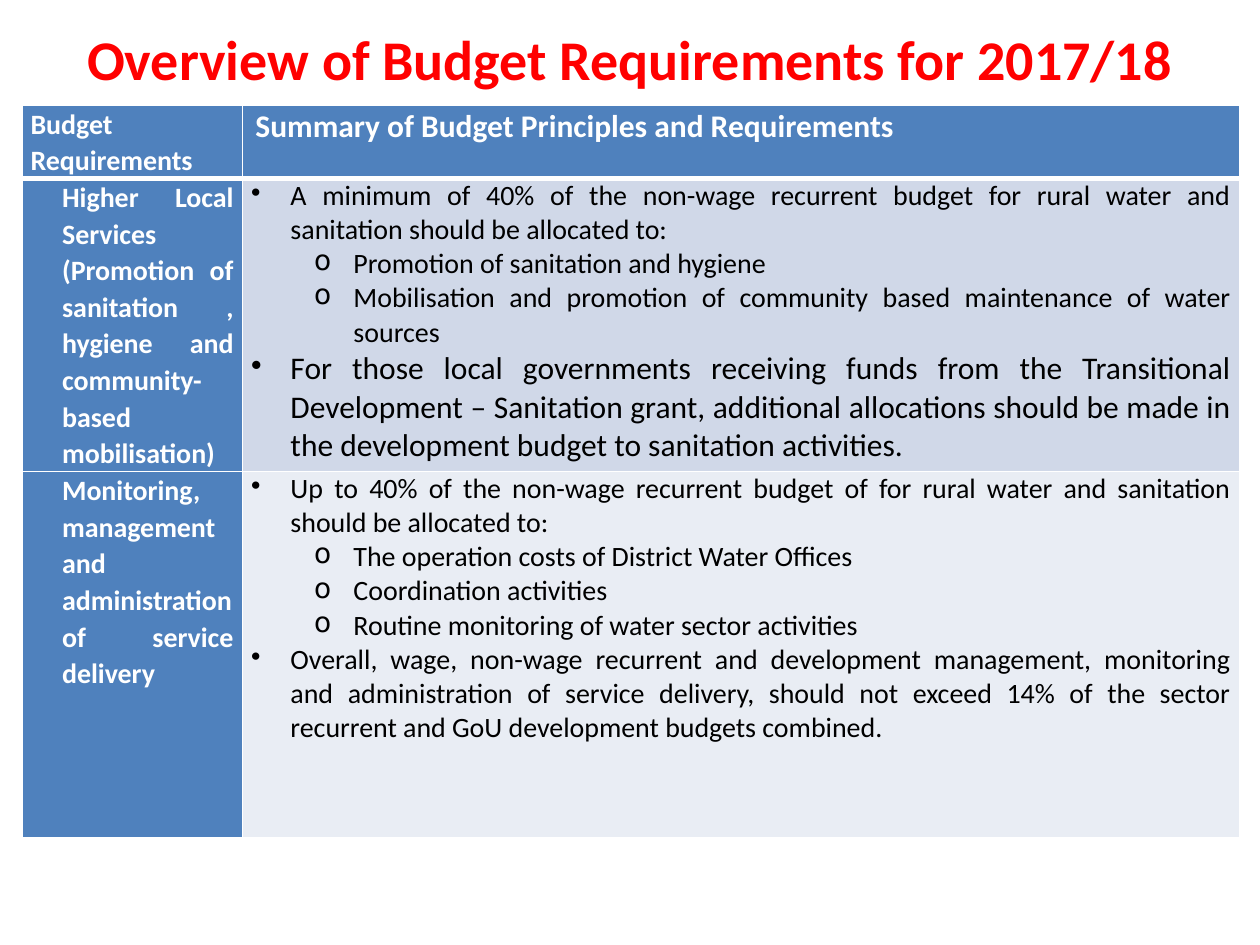
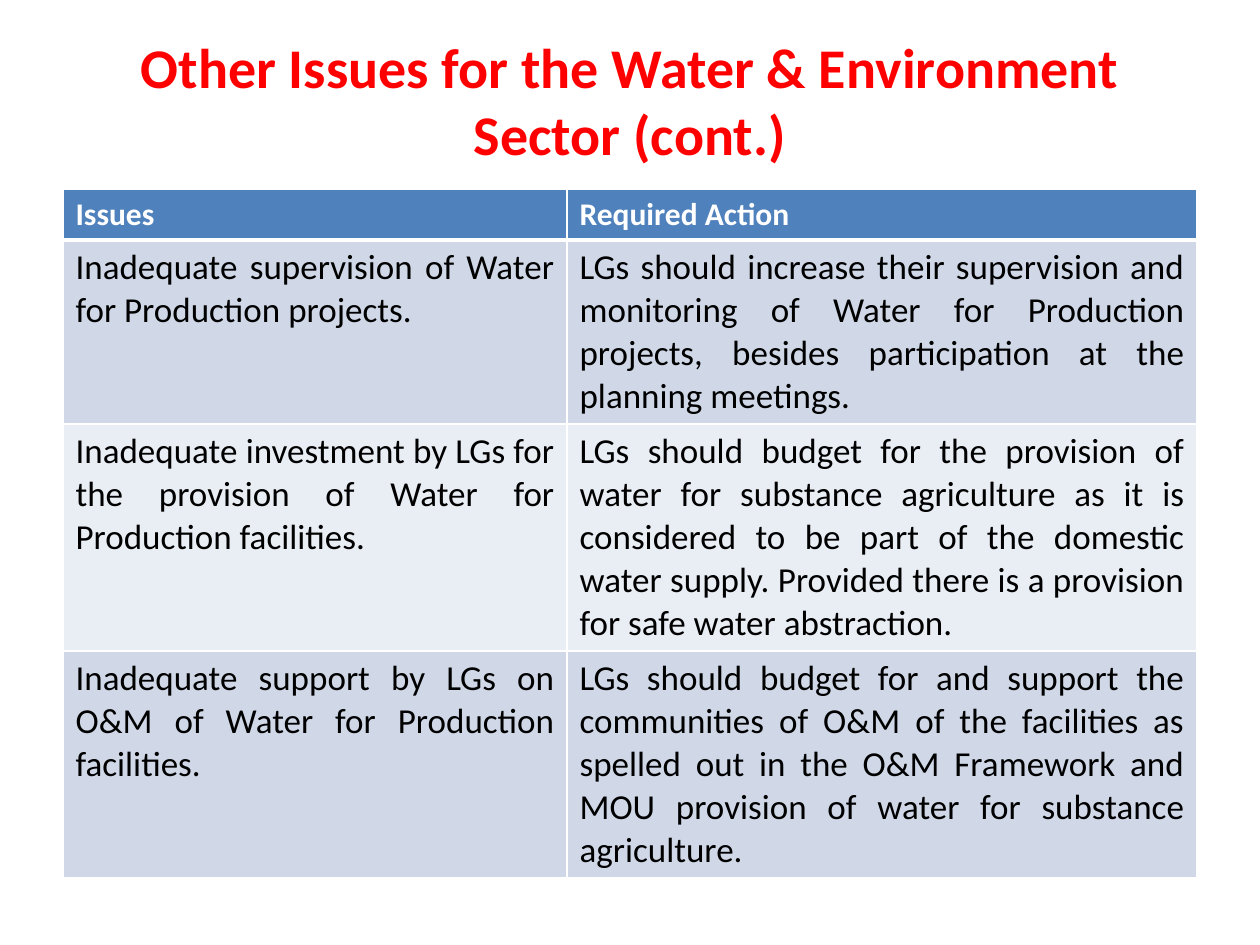
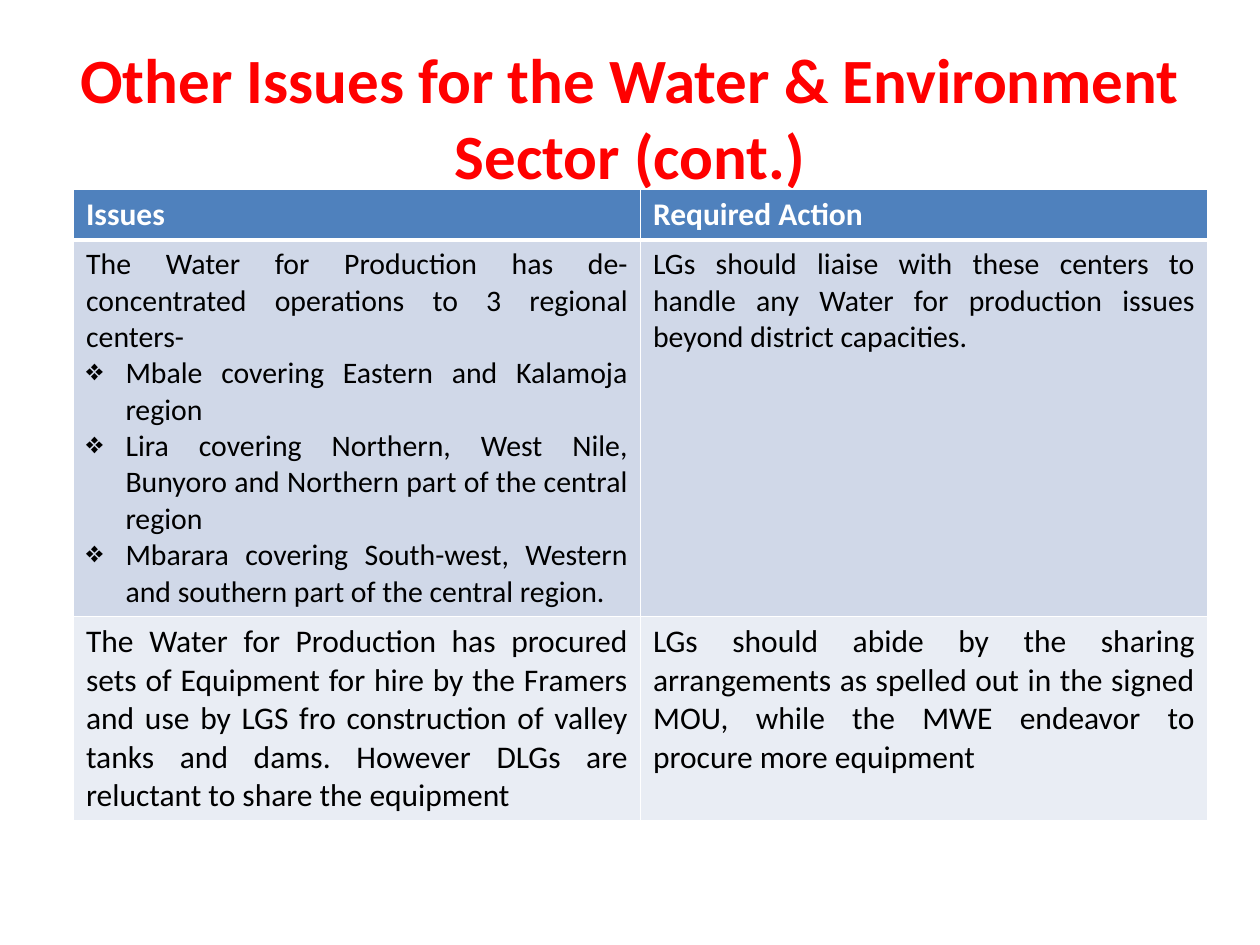
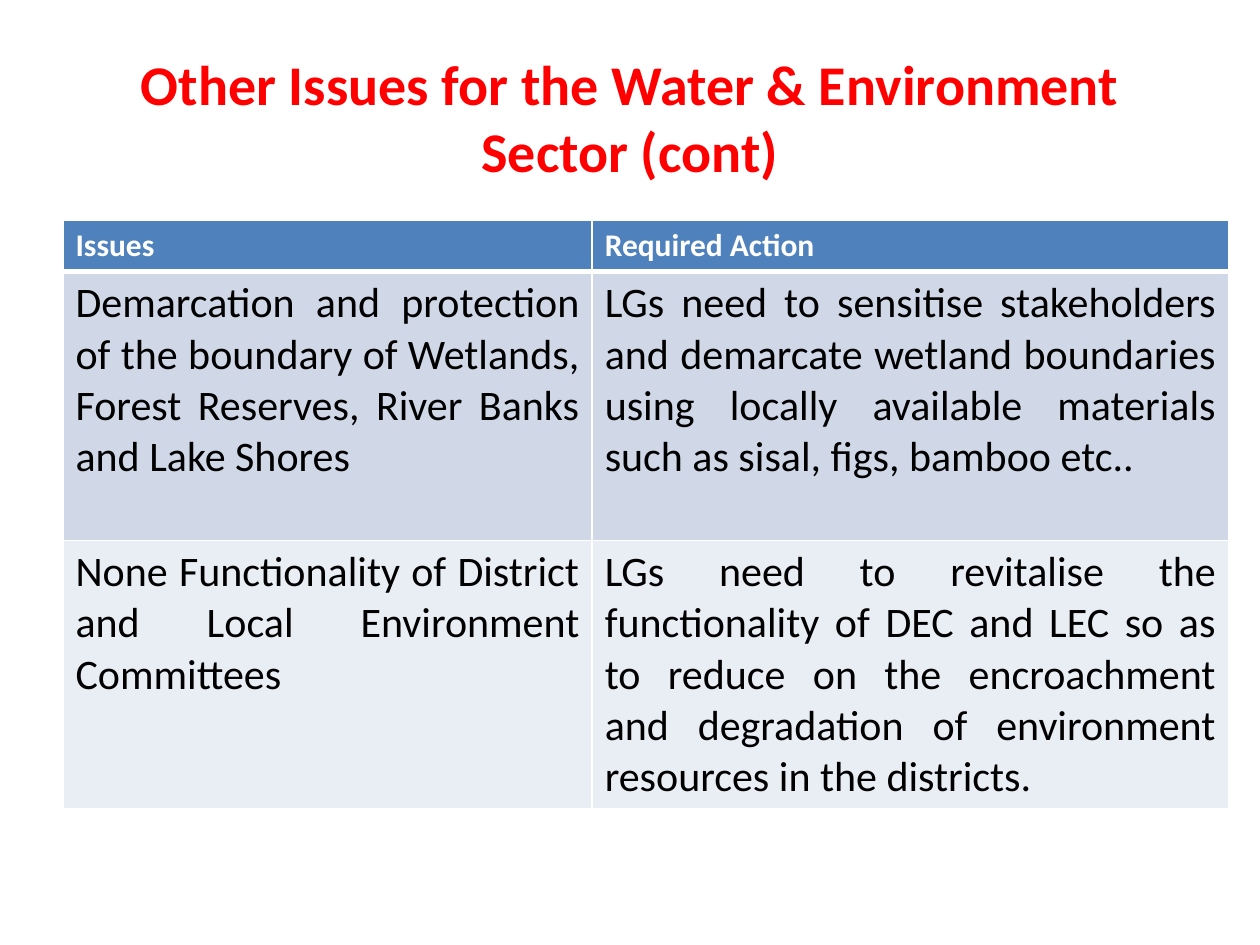
from dataclasses import dataclass

from lxml.etree import SubElement
from pptx import Presentation
from pptx.dml.color import RGBColor
from pptx.enum.text import MSO_ANCHOR as Anchor, PP_ALIGN as Align
from pptx.oxml.ns import qn
from pptx.util import Pt

COLORS = {
    "title": "FF0000",
    "header": "4F81BD",
    "band_dark": "D0D8E8",
    "band_light": "E9EDF4",
    "light_text": "FFFFFF",
    "dark_text": "000000",
    "border": "FFFFFF",
}
FONT = "Calibri"
TITLE_ONLY = 5
HEADER_HEIGHT = 29.2
HEADER_SIZE = 18
ISSUE_HEADER = ["Issues", "Required Action"]
ISSUE_TITLE = "Other Issues for the Water & Environment Sector (cont.)"


@dataclass
class Item:
    text: str
    size: float = None
    bullet: str = None
    level: int = 0
    indent: float = 0
    align: Align = Align.JUSTIFY
    spacing: float = None


def point(text, size=None):
    return Item(text, size, "•", indent=22.5)


def subpoint(text):
    return Item(text, bullet="o", level=1, indent=58.5)


def diamond(text):
    return Item(text, bullet="❖", indent=22.5)


def label(text, size=16, indent=18, align=Align.JUSTIFY):
    return Item(text, size, indent=indent, align=align, spacing=1.07)


class Deck:
    hanging = 22.5

    def __init__(self):
        self.presentation = Presentation()
        self.presentation.slide_width = Pt(720)
        self.presentation.slide_height = Pt(540)
        self.slide = None

    def add_slide(self, title, top, height, size=32):
        layout = self.presentation.slide_layouts[TITLE_ONLY]
        self.slide = self.presentation.slides.add_slide(layout)
        shape = self.slide.shapes.title
        shape.left, shape.top, shape.width, shape.height = Pt(36), Pt(top), Pt(648), Pt(height)
        frame = shape.text_frame
        frame.text = title
        frame.vertical_anchor = Anchor.MIDDLE
        paragraph = frame.paragraphs[0]
        paragraph.alignment = Align.CENTER
        self.style_font(paragraph, size, "title", True)

    def style_font(self, paragraph, size, color, bold):
        font = paragraph.font
        font.name, font.size, font.bold = FONT, Pt(size), bold
        font.color.rgb = RGBColor.from_string(COLORS[color])

    def add_table(self, left, top, widths, heights, rows, sizes, label_column=False):
        table = self.slide.shapes.add_table(
            len(rows), len(widths), Pt(left), Pt(top), Pt(sum(widths)), Pt(sum(heights))
        ).table
        table.first_col = label_column
        for column, width in zip(table.columns, widths):
            column.width = Pt(width)
        for row_index, (row, height, size) in enumerate(zip(rows, heights, sizes)):
            table.rows[row_index].height = Pt(height)
            band = "band_dark" if row_index % 2 else "band_light"
            for column_index, content in enumerate(row):
                cell = table.cell(row_index, column_index)
                heading = row_index == 0 or (label_column and column_index == 0)
                if label_column:
                    cell.margin_left = cell.margin_right = Pt(5)
                    cell.margin_top = cell.margin_bottom = 0
                cell.fill.solid()
                cell.fill.fore_color.rgb = RGBColor.from_string(COLORS["header" if heading else band])
                self.add_borders(cell, row_index)
                self.fill_cell(cell, content, size, heading, row_index == 0)

    def fill_cell(self, cell, content, size, heading, header):
        items = content if isinstance(content, list) else [content]
        frame = cell.text_frame
        for index, item in enumerate(items):
            if isinstance(item, str):
                item = Item(item, align=Align.LEFT if header else Align.JUSTIFY)
            paragraph = frame.add_paragraph() if index else frame.paragraphs[0]
            paragraph.text = item.text
            paragraph.alignment = item.align
            paragraph.level = item.level
            if item.spacing:
                paragraph.line_spacing = item.spacing
            color = "light_text" if heading else "dark_text"
            self.style_font(paragraph, item.size or size, color, heading)
            self.indent(paragraph, item)

    def indent(self, paragraph, item):
        properties = paragraph._p.get_or_add_pPr()
        properties.set("marL", str(Pt(item.indent)))
        properties.set("indent", str(Pt(-self.hanging if item.bullet else 0)))
        if item.bullet:
            bullet = properties.makeelement(qn("a:buChar"), {"char": item.bullet})
            properties.insert_element_before(bullet, "a:tabLst", "a:defRPr", "a:extLst")

    def add_borders(self, cell, row_index):
        properties = cell._tc.get_or_add_tcPr()
        thick_edge = {0: "lnB", 1: "lnT"}.get(row_index)
        for index, edge in enumerate(("lnL", "lnR", "lnT", "lnB")):
            width = Pt(3 if edge == thick_edge else 1)
            line = properties.makeelement(qn(f"a:{edge}"), {"w": str(width)})
            fill = SubElement(line, qn("a:solidFill"))
            SubElement(fill, qn("a:srgbClr"), val=COLORS["border"])
            properties.insert(index, line)

    def save(self):
        self.presentation.save("out.pptx")


def add_budget_slide(deck):
    deck.add_slide("Overview of Budget Requirements for 2017/18", 0, 66)
    rows = [
        [
            label("Budget Requirements", indent=0, align=Align.LEFT),
            label("Summary of Budget Principles and Requirements", 18, 2.5, Align.LEFT),
        ],
        [
            label("Higher Local Services (Promotion of sanitation , hygiene and community-based mobilisation)"),
            [
                point("A minimum of 40% of the non-wage recurrent budget for rural water and sanitation "
                      "should be allocated to:"),
                subpoint("Promotion of sanitation and hygiene"),
                subpoint("Mobilisation and promotion of community based maintenance of water sources"),
                point("For those local governments receiving funds from the Transitional Development – "
                      "Sanitation grant, additional allocations should be made in the development budget "
                      "to sanitation activities.", 18),
            ],
        ],
        [
            label("Monitoring, management and administration of service delivery"),
            [
                point("Up to 40% of the non-wage recurrent budget of for rural water and sanitation "
                      "should be allocated to:"),
                subpoint("The operation costs of District Water Offices"),
                subpoint("Coordination activities"),
                subpoint("Routine monitoring of water sector activities"),
                point("Overall, wage, non-wage recurrent and development management, monitoring and "
                      "administration of service delivery, should not exceed 14% of the sector recurrent "
                      "and GoU development budgets combined."),
            ],
        ],
    ]
    deck.add_table(12.5, 60, [126, 570], [42, 167.5, 209.5], rows, [16, 16, 16], label_column=True)


def add_supervision_slide(deck):
    deck.add_slide(ISSUE_TITLE, 12, 90)
    rows = [
        ISSUE_HEADER,
        [
            "Inadequate supervision of Water for Production projects.",
            "LGs should increase their supervision and monitoring of Water for Production projects, "
            "besides participation at the planning meetings.",
        ],
        [
            "Inadequate investment by LGs for the provision of Water for Production facilities.",
            "LGs should budget for the provision of water for substance agriculture as it is considered "
            "to be part of the domestic water supply. Provided there is a provision for safe water "
            "abstraction.",
        ],
        [
            "Inadequate support by LGs on O&M of Water for Production facilities.",
            "LGs should budget for and support the communities of O&M of the facilities as spelled out "
            "in the O&M Framework and MOU provision of water for substance agriculture.",
        ],
    ]
    heights = [HEADER_HEIGHT, 104.9, 129.2, 129.2]
    deck.add_table(36, 108, [288, 360], heights, rows, [HEADER_SIZE, 20, 20, 20])


def add_regional_slide(deck):
    deck.add_slide(ISSUE_TITLE, 21.6, 90, 36)
    rows = [
        ISSUE_HEADER,
        [
            [
                "The Water for Production has de-concentrated operations to 3 regional centers-",
                diamond("Mbale covering Eastern and Kalamoja region"),
                diamond("Lira covering Northern, West Nile, Bunyoro and Northern part of the central region"),
                diamond("Mbarara covering South-west, Western and southern part of the central region."),
            ],
            "LGs should liaise with these centers to handle any Water for production issues beyond "
            "district capacities.",
        ],
        [
            "The Water for Production has procured sets of Equipment for hire by the Framers and use by "
            "LGS fro construction of valley tanks and dams. However DLGs are reluctant to share the "
            "equipment",
            "LGs should abide by the sharing arrangements as spelled out in the signed MOU, while the "
            "MWE endeavor to procure more equipment",
        ],
    ]
    deck.add_table(42, 108, [324, 324], [HEADER_HEIGHT, 214.7, 117], rows, [HEADER_SIZE, 17, 18])


def add_environment_slide(deck):
    deck.add_slide("Other Issues for the Water & Environment Sector (cont)", 21.6, 90)
    rows = [
        ISSUE_HEADER,
        [
            "Demarcation and protection of the boundary of Wetlands, Forest Reserves, River Banks and "
            "Lake Shores",
            "LGs need to sensitise stakeholders and demarcate wetland boundaries using locally available "
            "materials such as sisal, figs, bamboo etc..",
        ],
        [
            "None Functionality of District and Local Environment Committees",
            "LGs need to revitalise the functionality of DEC and LEC so as to reduce on the encroachment "
            "and degradation of environment resources in the districts.",
        ],
    ]
    heights = [HEADER_HEIGHT, 153.6, 153.6]
    deck.add_table(36, 126, [302.4, 363.6], heights, rows, [HEADER_SIZE, 24, 24])


def main():
    deck = Deck()
    add_budget_slide(deck)
    add_supervision_slide(deck)
    add_regional_slide(deck)
    add_environment_slide(deck)
    deck.save()


if __name__ == "__main__":
    main()
